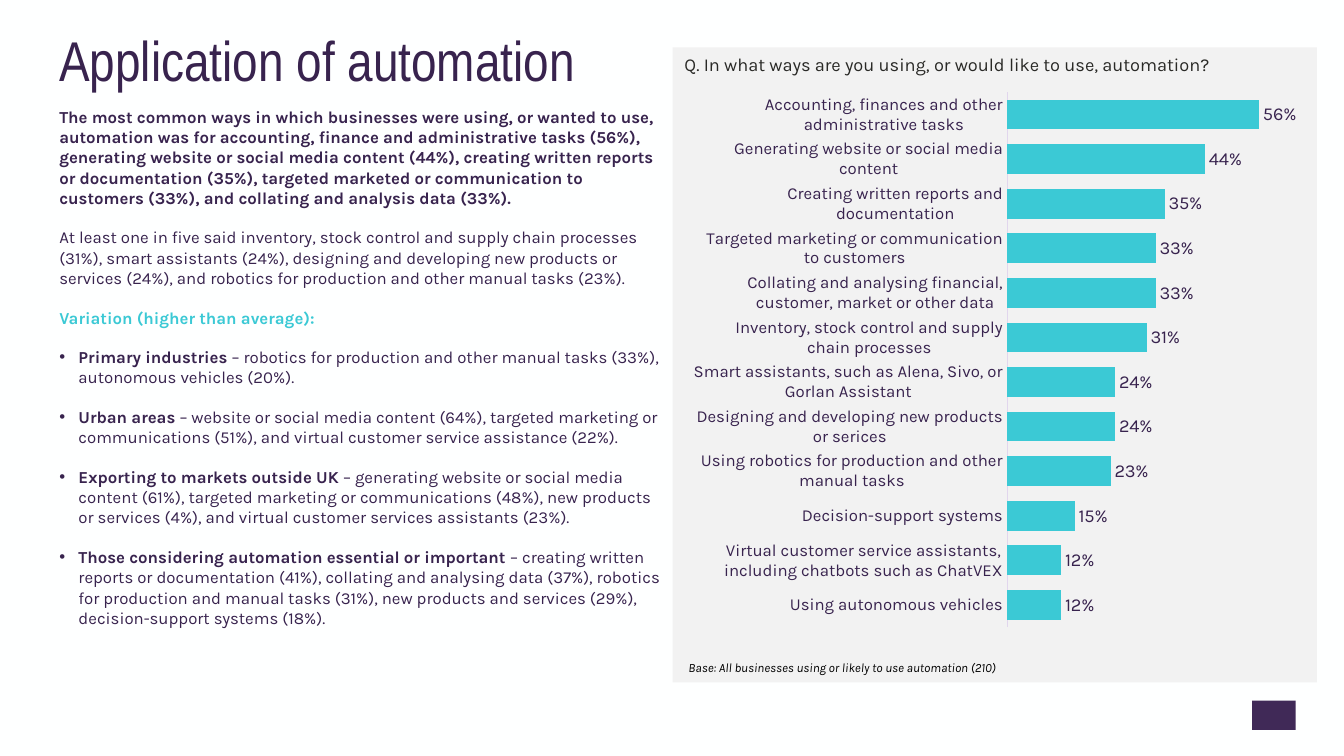
from dataclasses import dataclass
from typing import NamedTuple

from lxml.etree import SubElement
from pptx import Presentation
from pptx.chart.data import CategoryChartData
from pptx.dml.color import RGBColor
from pptx.enum.chart import XL_CHART_TYPE as ChartType
from pptx.enum.chart import XL_LABEL_POSITION as LabelPosition
from pptx.enum.chart import XL_TICK_MARK as TickMark
from pptx.enum.shapes import MSO_SHAPE as Shape
from pptx.enum.text import MSO_ANCHOR as Anchor
from pptx.oxml.ns import qn
from pptx.util import Pt

PX = 9144


class Box(NamedTuple):
    left: int
    top: int
    width: int
    height: int

    def inner(self, left, top, width, height):
        return Box(self.left + left, self.top + top, width, height)

    def emu(self):
        return [value * PX for value in self]


@dataclass(frozen=True)
class Theme:
    paper: str = "FEFFFF"
    panel: str = "F2F2F2"
    purple: str = "38234E"
    block: str = "402957"
    teal: str = "3BC9D5"
    question: str = "292926"
    base: str = "000000"
    axis: str = "E1D6ED"
    heading_font: str = "Arial Narrow"
    body_font: str = "Karla"
    chart_font: str = "Calibri"
    heading_size: int = 40
    question_size: int = 13
    body_size: int = 12
    base_size: int = 9
    gap: int = 14


THEME = Theme()

SUMMARY = [
    ("The most common ways in which businesses were using, or wanted to use, automation was for "
     "accounting, finance and administrative tasks (56%), generating website or social media content "
     "(44%), creating written reports or documentation (35%), targeted marketed or communication to "
     "customers (33%), and collating and analysis data (33%).", THEME.purple, True),
    ("At least one in five said inventory, stock control and supply chain processes (31%), smart "
     "assistants (24%), designing and developing new products or services (24%), and robotics for "
     "production and other manual tasks (23%).", THEME.purple, False),
    ("Variation (higher than average):", THEME.teal, True),
]
VARIATIONS = [
    ("Primary industries",
     " – robotics for production and other manual tasks (33%), autonomous vehicles (20%)."),
    ("Urban areas",
     " – website or social media content (64%), targeted marketing or communications (51%), and "
     "virtual customer service assistance (22%)."),
    ("Exporting to markets outside UK",
     " – generating website or social media content (61%), targeted marketing or communications "
     "(48%), new products or services (4%), and virtual customer services assistants (23%)."),
    ("Those considering automation essential or important",
     " – creating written reports or documentation (41%), collating and analysing data (37%), "
     "robotics for production and manual tasks (31%), new products and services (29%), "
     "decision-support systems (18%)."),
]
USES = {
    "Accounting, finances and other administrative tasks": 0.56,
    "Generating website or social media content": 0.44,
    "Creating written reports and documentation": 0.35,
    "Targeted marketing or communication to customers": 0.33,
    "Collating and analysing financial, customer, market or other data": 0.33,
    "Inventory, stock control and supply chain processes": 0.31,
    "Smart assistants, such as Alena, Sivo, or Gorlan Assistant": 0.24,
    "Designing and developing new products or serices": 0.24,
    "Using robotics for production and other manual tasks": 0.23,
    "Decision-support systems": 0.15,
    "Virtual customer service assistants, including chatbots such as ChatVEX": 0.12,
    "Using autonomous vehicles": 0.12,
}


def style(font, size, color, name=THEME.body_font, bold=False, italic=False):
    font.size = Pt(size)
    font.name = name
    font.color.rgb = RGBColor.from_string(color)
    font.bold = bold
    font.italic = italic


def add_text_frame(page, box, anchor):
    frame = page.shapes.add_textbox(*box.emu()).text_frame
    frame.word_wrap = True
    frame.vertical_anchor = anchor
    return frame


def add_line(page, box, text, *look, **options):
    frame = add_text_frame(page, box, Anchor.MIDDLE)
    frame.text = text
    para = frame.paragraphs[0]
    style(para.runs[0].font, *look, **options)
    return para


def add_rectangle(page, box, color):
    shape = page.shapes.add_shape(Shape.RECTANGLE, *box.emu())
    shape.shadow.inherit = False
    shape.fill.solid()
    shape.fill.fore_color.rgb = RGBColor.from_string(color)
    shape.line.fill.background()


def add_title(page, box):
    para = add_line(page, box, "Application of automation",
                    THEME.heading_size, THEME.purple, THEME.heading_font)
    para.line_spacing = 0.9


def add_bullet(para):
    properties = para._p.get_or_add_pPr()
    properties.set("marL", str(19 * PX))
    properties.set("indent", str(-19 * PX))
    SubElement(properties, qn("a:buFont"), typeface="Arial")
    SubElement(properties, qn("a:buChar"), char="•")


def add_findings(page, box):
    frame = add_text_frame(page, box, Anchor.TOP)
    for index, (text, color, bold) in enumerate(SUMMARY):
        para = frame.add_paragraph() if index else frame.paragraphs[0]
        para.text = text
        style(para.runs[0].font, THEME.body_size, color, bold=bold)
        if index:
            para.space_before = Pt(THEME.gap)
    for group, detail in VARIATIONS:
        para = frame.add_paragraph()
        add_bullet(para)
        para.space_before = Pt(THEME.gap)
        for text, bold in ((group, True), (detail, False)):
            span = para.add_run()
            span.text = text
            style(span.font, THEME.body_size, THEME.purple, bold=bold)


def set_plot_layout(chart, **fractions):
    plot_area = chart._chartSpace.chart.plotArea
    for old in plot_area.findall(qn("c:layout")):
        plot_area.remove(old)
    layout = SubElement(plot_area, qn("c:layout"))
    plot_area.insert(0, layout)
    manual = SubElement(layout, qn("c:manualLayout"))
    settings = {"layoutTarget": "inner", "xMode": "edge", "yMode": "edge", **fractions}
    for tag, value in settings.items():
        SubElement(manual, qn(f"c:{tag}"), val=str(value))


def add_uses_chart(page, box):
    data = CategoryChartData(number_format="0%")
    data.categories = list(USES)
    data.add_series("Series 1", list(USES.values()))
    chart = page.shapes.add_chart(ChartType.BAR_CLUSTERED, *box.emu(), data).chart
    chart.has_legend = False
    chart.has_title = False
    style(chart.font, THEME.question_size, THEME.purple, THEME.chart_font)
    set_plot_layout(chart, x=0.51, y=0.01, w=0.44, h=0.96)

    uses = chart.category_axis
    uses.reverse_order = True
    uses.major_tick_mark = TickMark.NONE
    uses.format.line.color.rgb = RGBColor.from_string(THEME.axis)
    uses.format.line.width = Pt(0.75)
    style(uses.tick_labels.font, THEME.body_size, THEME.purple)

    share = chart.value_axis
    share.visible = False
    share.has_major_gridlines = False
    share.minimum_scale = 0
    share.maximum_scale = 0.6

    plot = chart.plots[0]
    plot.gap_width = 50
    plot.vary_by_categories = False
    fill = plot.series[0].format.fill
    fill.solid()
    fill.fore_color.rgb = RGBColor.from_string(THEME.teal)
    labels = plot.series[0].data_labels
    labels.show_value = True
    labels.position = LabelPosition.OUTSIDE_END
    labels.number_format = "0%"
    labels.number_format_is_linked = False
    style(labels.font, THEME.question_size, THEME.purple)


def add_chart_panel(page, box):
    add_rectangle(page, box, THEME.panel)
    add_line(page, box.inner(6, 602, 487, 27),
             "Base: All businesses using or likely to use automation (210)",
             THEME.base_size, THEME.base, italic=True)
    add_line(page, box.inner(2, -6, 628, 46),
             "Q. In what ways are you using, or would like to use, automation?",
             THEME.question_size, THEME.question)
    add_uses_chart(page, box.inner(21, 39, 609, 553))


def main():
    deck = Presentation()
    deck.slide_width, deck.slide_height = 1333 * PX, 750 * PX
    page = deck.slides.add_slide(deck.slide_layouts[6])
    page.background.fill.solid()
    page.background.fill.fore_color.rgb = RGBColor.from_string(THEME.paper)
    add_rectangle(page, Box(1242, 695, 43, 29), THEME.block)
    add_title(page, Box(49, 24, 1150, 77))
    add_findings(page, Box(49, 101, 617, 555))
    add_chart_panel(page, Box(667, 47, 639, 630))
    deck.save("out.pptx")


if __name__ == "__main__":
    main()
